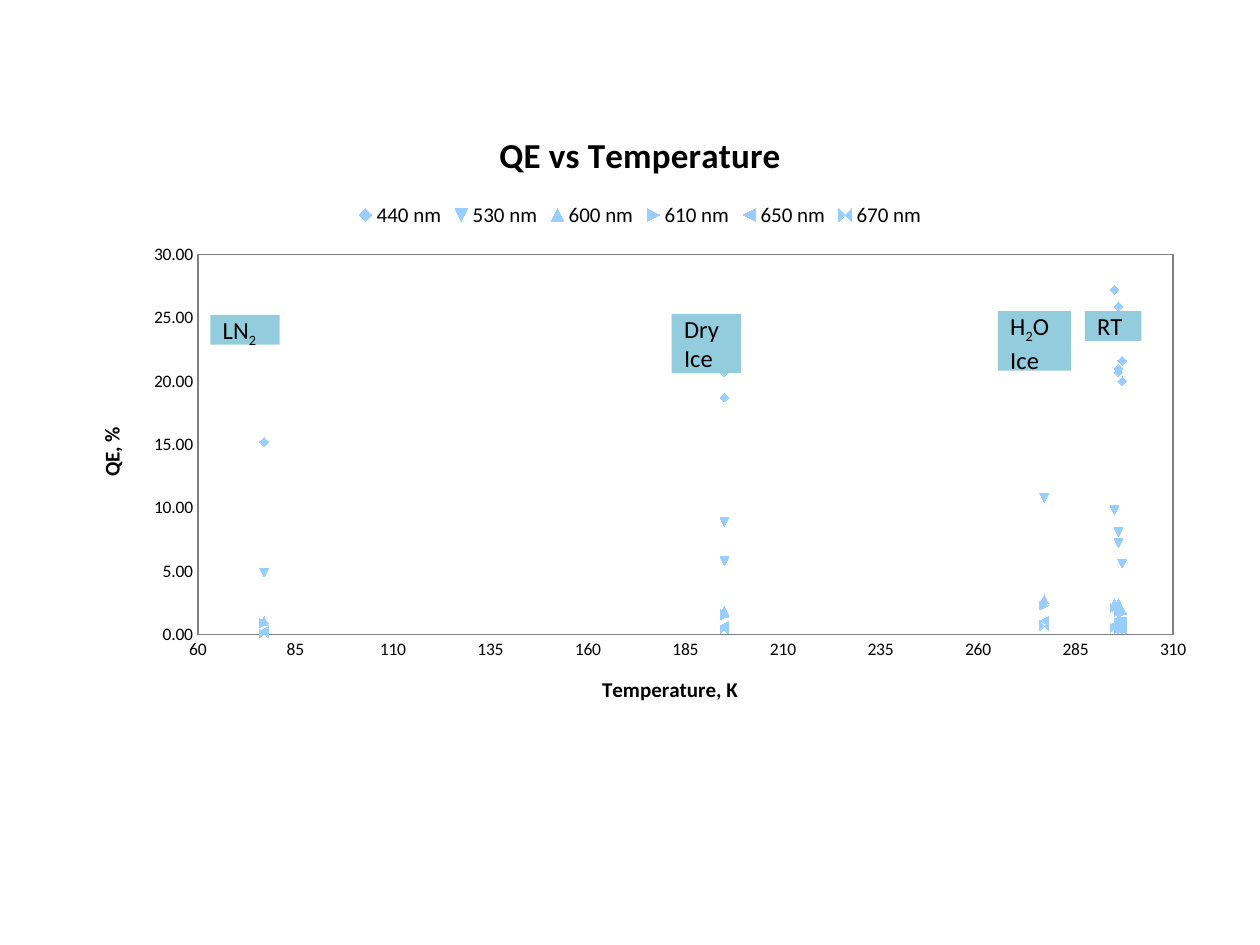
from lxml.etree import SubElement
from pptx import Presentation
from pptx.chart.data import XyChartData
from pptx.dml.color import RGBColor
from pptx.enum.chart import XL_CHART_TYPE, XL_LEGEND_POSITION, XL_MARKER_STYLE, XL_TICK_MARK
from pptx.enum.shapes import MSO_SHAPE
from pptx.enum.text import MSO_ANCHOR, MSO_AUTO_SIZE, PP_ALIGN
from pptx.oxml import parse_xml
from pptx.oxml.ns import nsdecls, qn
from pptx.util import Pt

COLORS = {"text": "000000", "label": "93CDDD", "marker": "99CCFF", "axis": "808080"}
TEMPERATURES = [295, 277, 296, 195, 296, 195, 297, 77, 297, 296]
SERIES = [
    ("440 nm", XL_MARKER_STYLE.DIAMOND, [27.2, 23.4, 20.7, 20.7, 25.9, 18.7, 20, 15.2, 21.6, 21]),
    ("530 nm", None, [9.8, 10.8, 8.1, 8.9, 7.2, 5.8, 5.6, 4.9, 1, 0.9]),
    ("600 nm", XL_MARKER_STYLE.TRIANGLE, [2.5, 2.8, 2.5, 1.9, 2.1, 1.7, 1.9, 1.1, 0.5, 0.5]),
    ("610 nm", XL_MARKER_STYLE.DOT, [2.1, 2.3, 2, 1.6, 1.8, 1.5, 1.7, 0.9, 0.8, 0.7]),
    ("650 nm", None, [0.8, 1.1, 0.9, 0.7, 0.7, 0.7, 1, 0.3, 0.8, 0.6]),
    ("670 nm", None, [0.5, 0.7, 0.6, 0.4, 0.4, 0.4, 0.7, 0.1, 0.4, 0.4]),
]
LABELS = [
    ((120.2, 180, 39.6, 17), [[("LN", 0), ("2", -25)]]),
    ((383.8, 179.3, 39.6, 34), [[("Dry Ice", 0)]]),
    ((570.2, 177.8, 41.8, 34), [[("H", 0), ("2", -25), ("O", 0)], [("Ice", 0)]]),
    ((619.9, 177.8, 32.4, 17), [[("RT", 0)]]),
]
PLOT_LAYOUT = {"x": 0.11, "y": 0.24, "w": 0.86, "h": 0.61}


class SlideBuilder:
    """Hold the text style and current slide, and add each kind of element."""

    def __init__(self, s, font="Calibri"):
        self.s = s
        self.font = font

    def color(self, key):
        return RGBColor.from_string(COLORS[key])

    def style(self, font, size, bold=False):
        for name, value in {"name": self.font, "size": Pt(size), "bold": bold}.items():
            setattr(font, name, value)
        font.color.rgb = self.color("text")

    def title(self, owner, text, size):
        tf = owner.text_frame
        tf.text = text
        self.style(tf.paragraphs[0].runs[0].font, size, True)

    def axis(self, axis, title, **scale):
        settings = {"has_major_gridlines": False, "has_minor_gridlines": False,
                    "major_tick_mark": XL_TICK_MARK.NONE, "minor_tick_mark": XL_TICK_MARK.NONE}
        for name, value in {**settings, **scale}.items():
            setattr(axis, name, value)
        self.title(axis.axis_title, title, 12)
        self.style(axis.tick_labels.font, 10)
        axis.format.line.color.rgb = self.color("axis")
        axis.format.line.width = Pt(0.75)

    def plot_area(self, chart):
        area = chart._chartSpace.chart.plotArea
        for old in area.findall(qn("c:layout")):
            area.remove(old)
        layout = parse_xml(f"<c:layout {nsdecls('c')}><c:manualLayout/></c:layout>")
        modes = {"layoutTarget": "inner", "xMode": "edge", "yMode": "edge"}
        for tag, value in {**modes, **PLOT_LAYOUT}.items():
            SubElement(layout[0], qn(f"c:{tag}")).set("val", str(value))
        area.insert(0, layout)
        area.append(parse_xml(
            f"<c:spPr {nsdecls('c', 'a')}><a:noFill/><a:ln w='9525'><a:solidFill>"
            f"<a:srgbClr val='{COLORS['axis']}'/></a:solidFill></a:ln></c:spPr>"))

    def scatter(self, box, title):
        data = XyChartData(number_format="0.00")
        for name, _, values in SERIES:
            series = data.add_series(name)
            for x, y in zip(TEMPERATURES, values):
                series.add_data_point(x, y)
        chart = self.s.shapes.add_chart(
            XL_CHART_TYPE.XY_SCATTER, *map(Pt, box), data).chart
        self.style(chart.font, 10)
        chart.has_title = True
        self.title(chart.chart_title, title, 20)
        chart.has_legend = True
        chart.legend.position = XL_LEGEND_POSITION.TOP
        chart.legend.include_in_layout = False
        self.style(chart.legend.font, 12)
        chart.plots[0].vary_by_categories = False
        for series, (_, symbol, _) in zip(chart.plots[0].series, SERIES):
            series.smooth = False
            series.format.line.fill.background()
            marker = series.marker
            if symbol is not None:
                marker.style = symbol
            marker.size = 5
            marker.format.fill.solid()
            marker.format.fill.fore_color.rgb = self.color("marker")
            marker.format.line.color.rgb = self.color("marker")
        self.axis(chart.category_axis, "Temperature, K",
                  minimum_scale=60, maximum_scale=310, major_unit=25)
        self.axis(chart.value_axis, "QE, %",
                  minimum_scale=0, maximum_scale=30, major_unit=5)
        for axis, number_format in ((chart.category_axis, "0"), (chart.value_axis, "0.00")):
            axis.tick_labels.number_format = number_format
            axis.tick_labels.number_format_is_linked = False
        self.plot_area(chart)

    def label(self, box, lines):
        sp = self.s.shapes.add_shape(MSO_SHAPE.RECTANGLE, *map(Pt, box))
        sp.shadow.inherit = False
        sp.fill.solid()
        sp.fill.fore_color.rgb = self.color("label")
        sp.line.fill.background()
        tf = sp.text_frame
        settings = {"margin_left": Pt(7.2), "margin_right": Pt(7.2), "margin_top": 0,
                    "margin_bottom": 0, "word_wrap": True,
                    "vertical_anchor": MSO_ANCHOR.TOP,
                    "auto_size": MSO_AUTO_SIZE.SHAPE_TO_FIT_TEXT}
        for name, value in settings.items():
            setattr(tf, name, value)
        for i, runs in enumerate(lines):
            p = tf.add_paragraph() if i else tf.paragraphs[0]
            p.alignment = PP_ALIGN.LEFT
            for text, baseline in runs:
                r = p.add_run()
                r.text = text
                self.style(r.font, 14)
                if baseline:
                    r._r.get_or_add_rPr().set("baseline", str(baseline * 1000))


def main():
    prs = Presentation()
    prs.slide_width, prs.slide_height = Pt(720), Pt(540)
    builder = SlideBuilder(prs.slides.add_slide(prs.slide_layouts[6]))
    builder.scatter((41.8, 59.8, 648, 356.4), "QE vs Temperature")
    for box, lines in LABELS:
        builder.label(box, lines)
    prs.save("out.pptx")


if __name__ == "__main__":
    main()
